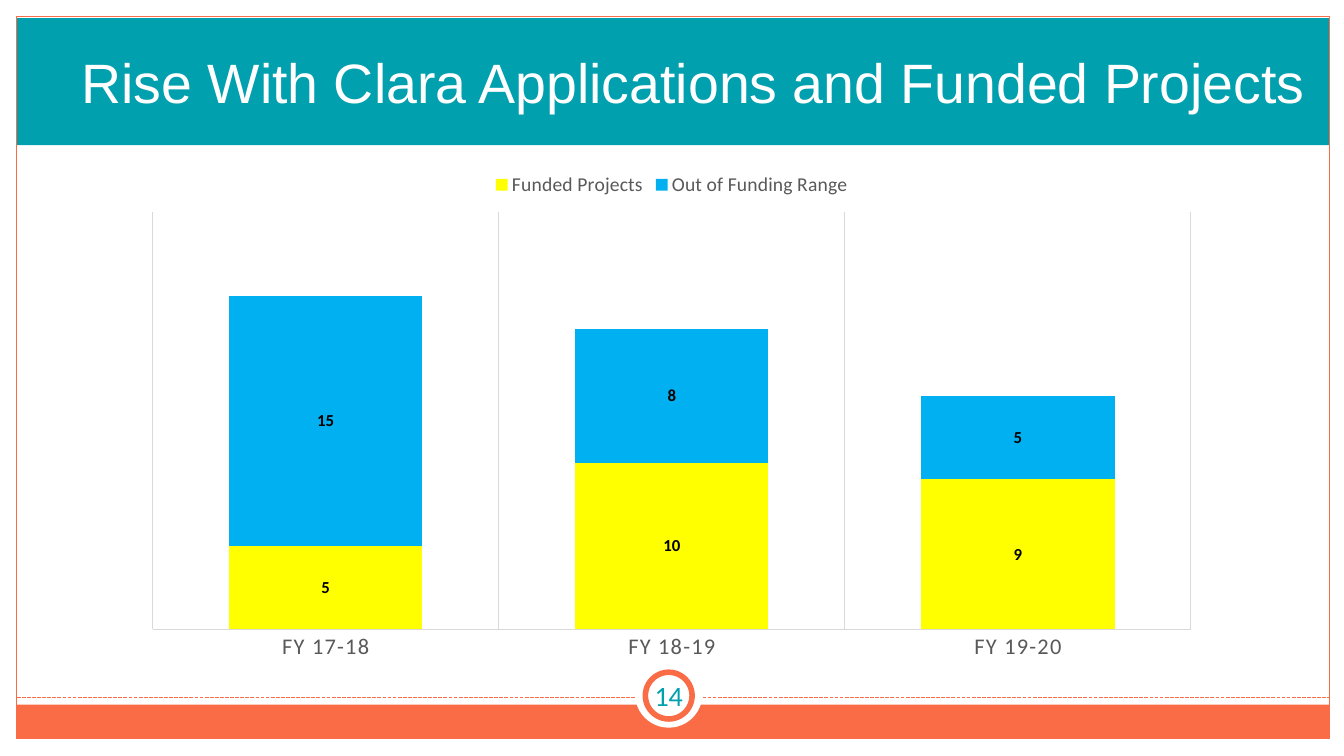
from lxml import etree
from pptx import Presentation
from pptx.chart.data import CategoryChartData
from pptx.dml.color import RGBColor
from pptx.enum import chart as charts, dml, shapes, text
from pptx.oxml.ns import qn
from pptx.util import Pt

TEAL, ORANGE, WHITE = "00A0AF", "F96C45", "FFFFFF"
GREY, PALE, BLACK = "595959", "D9D9D9", "000000"
YEARS = ["FY 17-18", "FY 18-19", "FY 19-20"]
SERIES = [
    ("Funded Projects", [5, 10, 9], "FFFF00"),
    ("Out of Funding Range", [15, 8, 5], "00B0F0"),
]


def color(value):
    return RGBColor.from_string(value)


def points(lengths):
    return [Pt(length) for length in lengths]


def set_all(target, values):
    for name, value in values.items():
        setattr(target, name, value)


def set_font(font, size, shade, name="Calibri", bold=False):
    set_all(font, {"size": Pt(size), "name": name, "bold": bold})
    font.color.rgb = color(shade)


def set_line(line, shade, width):
    line.color.rgb = color(shade)
    line.width = Pt(width)


def add_figure(page, kind, frame, fill=None, line=None, width=0.75):
    """Add a preset shape; without a fill or line colour that part is empty."""
    figure = page.shapes.add_shape(kind, *points(frame))
    figure.shadow.inherit = False
    if fill:
        figure.fill.solid()
        figure.fill.fore_color.rgb = color(fill)
    else:
        figure.fill.background()
    if line:
        set_line(figure.line, line, width)
    else:
        figure.line.fill.background()


def add_dashed_line(page, left, right, y):
    rule = page.shapes.add_connector(
        shapes.MSO_CONNECTOR.STRAIGHT, *points([left, y, right, y]))
    set_line(rule.line, ORANGE, 0.9)
    rule.line.dash_style = dml.MSO_LINE.SQUARE_DOT
    etree.SubElement(rule.element.spPr, qn("a:effectLst"))


def fill_text(box, words, size, shade, font="Calibri", align=None, spacing=None):
    frame = box.text_frame
    set_all(frame, {"word_wrap": True, "auto_size": text.MSO_AUTO_SIZE.NONE,
                    "vertical_anchor": text.MSO_ANCHOR.MIDDLE})
    para = frame.paragraphs[0]
    set_all(para, {"alignment": align, "line_spacing": spacing})
    span = para.add_run()
    span.text = words
    set_font(span.font, size, shade, font)


def add_title(page, words, frame):
    title = page.shapes.title
    set_all(title, dict(zip(("left", "top", "width", "height"), points(frame))))
    fill_text(title, words, 39.6, WHITE, "Arial", text.PP_ALIGN.LEFT, 0.9)
    page.shapes.element.append(title.element)  # bring in front of the band


def add_page_number(page, number):
    ellipse = shapes.MSO_SHAPE.OVAL
    add_figure(page, ellipse, (453.6, 471.6, 48.2, 48.2), WHITE)
    add_figure(page, ellipse, (461, 480.2, 33.4, 33.4), WHITE, ORANGE, 4)
    box = page.shapes.add_textbox(*points((447.1, 479.5, 61.2, 34.6)))
    fill_text(box, number, 20, TEAL, align=text.PP_ALIGN.CENTER)


def place_plot(chart, **fractions):
    """Fix the inner plot area at fractions of the chart frame."""
    area = chart.element.find(".//" + qn("c:plotArea"))
    for old in area.findall(qn("c:layout")):
        area.remove(old)
    layout = etree.Element(qn("c:layout"))
    manual = etree.SubElement(layout, qn("c:manualLayout"))
    settings = {"layoutTarget": "inner", "xMode": "edge", "yMode": "edge", **fractions}
    for name, value in settings.items():
        etree.SubElement(manual, qn("c:" + name)).set("val", str(value))
    area.insert(0, layout)


def format_axes(chart):
    years, counts = chart.category_axis, chart.value_axis
    set_all(years, {"major_tick_mark": charts.XL_TICK_MARK.NONE,
                    "has_major_gridlines": True})
    set_font(years.tick_labels.font, 16, GREY)
    for line in (years.format.line, years.major_gridlines.format.line):
        set_line(line, PALE, 0.75)
    for properties in chart.element.xpath(".//c:catAx//a:defRPr"):
        properties.set("spc", "100")
    set_all(counts, {"visible": False, "has_major_gridlines": False,
                     "minimum_scale": 0, "maximum_scale": 25})


def add_projects_chart(page, frame):
    data = CategoryChartData()
    data.categories = YEARS
    for name, values, _ in SERIES:
        data.add_series(name, values)
    chart = page.shapes.add_chart(
        charts.XL_CHART_TYPE.COLUMN_STACKED, *points(frame), data).chart
    set_font(chart.font, 10, BLACK)
    set_all(chart, {"has_title": False, "has_legend": True})
    set_all(chart.legend, {"position": charts.XL_LEGEND_POSITION.TOP,
                           "include_in_layout": False})
    set_font(chart.legend.font, 14, GREY)
    plot = chart.plots[0]
    set_all(plot, {"gap_width": 79, "overlap": 100, "vary_by_categories": False})
    for series, (_, _, shade) in zip(plot.series, SERIES):
        series.format.fill.solid()
        series.format.fill.fore_color.rgb = color(shade)
        labels = series.data_labels
        set_all(labels, {"show_value": True,
                         "position": charts.XL_LABEL_POSITION.CENTER})
        set_font(labels.font, 12, BLACK, bold=True)
    format_axes(chart)
    place_plot(chart, x=0.02, y=0.1, w=0.96, h=0.82)


def main():
    deck = Presentation()
    set_all(deck, {"slide_width": Pt(960), "slide_height": Pt(540)})
    page = deck.slides.add_slide(deck.slide_layouts.get_by_name("Title Only"))
    rectangle = shapes.MSO_SHAPE.RECTANGLE
    add_figure(page, rectangle, (12, 13, 937.4, 90.7), TEAL)
    add_figure(page, rectangle, (11.8, 503.3, 937.4, 24.5), ORANGE)
    add_figure(page, rectangle, (12, 12, 937.4, 515.5), line=ORANGE)
    add_dashed_line(page, 12, 949, 498.2)
    add_page_number(page, "14")
    add_title(page, "Rise With Clara Applications and Funded Projects",
              (51.1, 18.7, 895.7, 85))
    add_projects_chart(page, (93.6, 115.2, 772.6, 363.6))
    deck.save("out.pptx")


if __name__ == "__main__":
    main()
